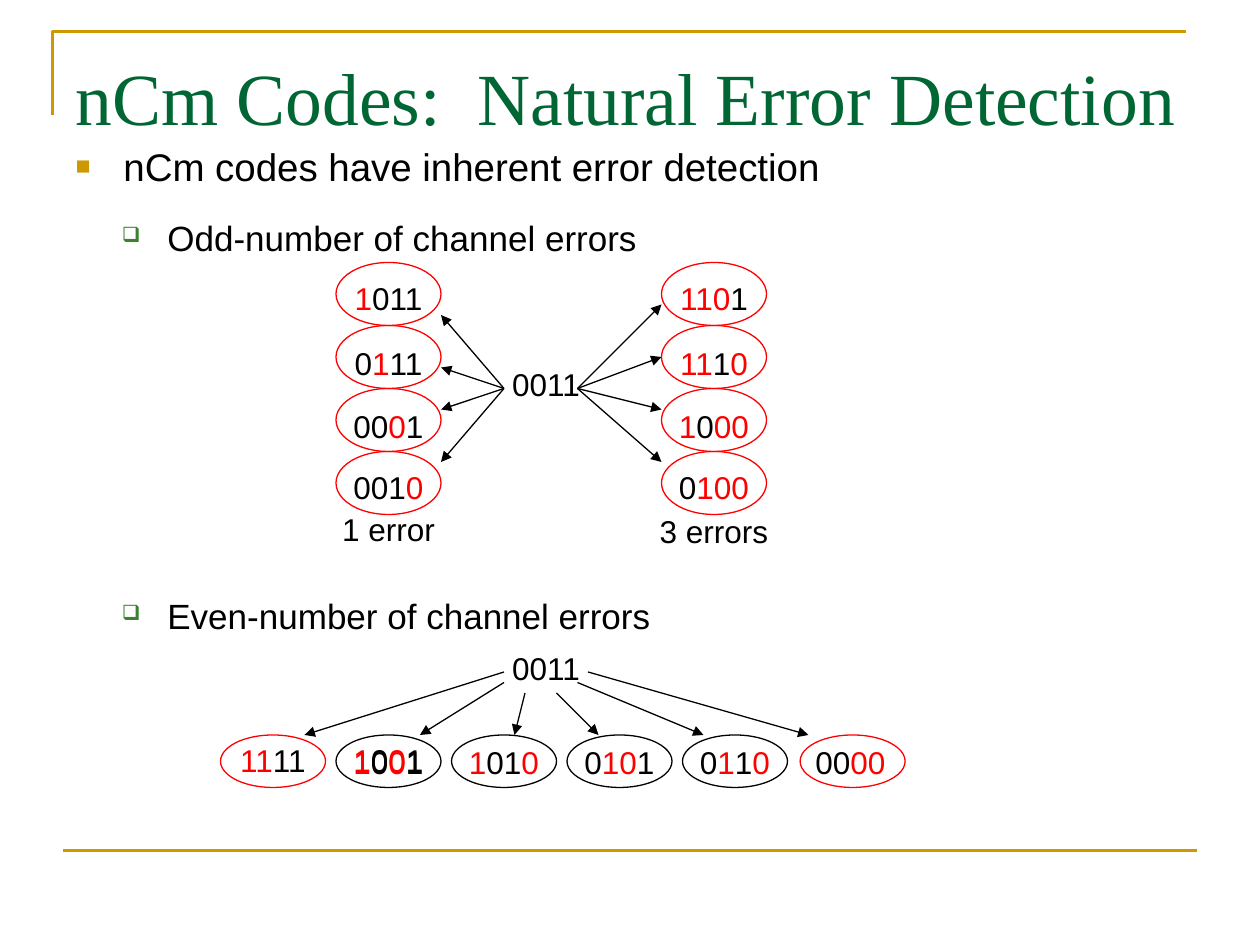
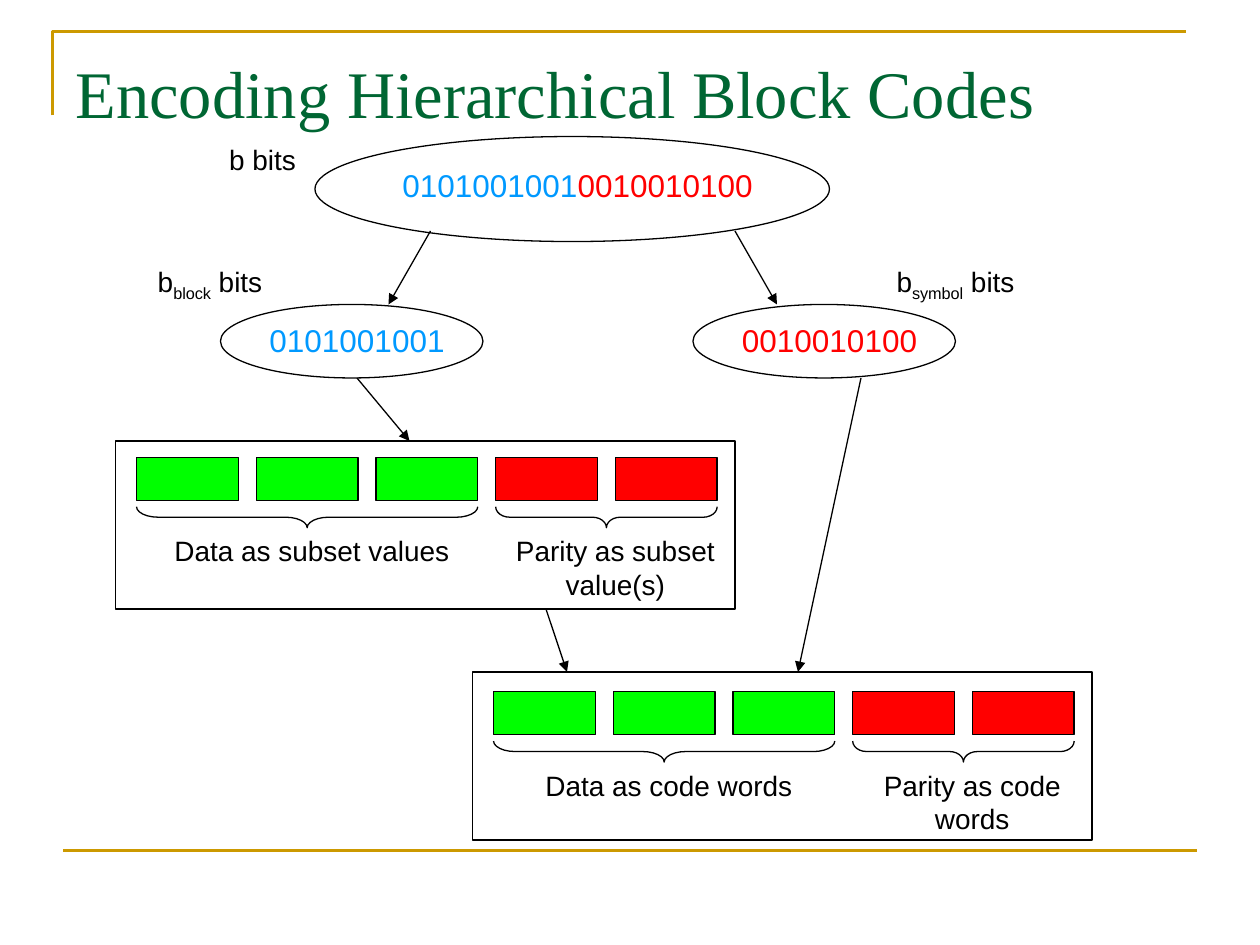
from itertools import groupby
from typing import Any, NamedTuple, Optional

from lxml.etree import SubElement
from pptx import Presentation
from pptx.dml.color import RGBColor
from pptx.enum.shapes import MSO_CONNECTOR, MSO_SHAPE
from pptx.enum.text import MSO_ANCHOR, MSO_AUTO_SIZE, PP_ALIGN
from pptx.oxml.ns import qn
from pptx.util import Inches, Pt

COLORS = {
    "gold": "CC9900",
    "title": "006633",
    "bullet": "3B812F",
    "black": "000000",
    "red": "FF0000",
    "blue": "0099FF",
    "green": "00FF00",
}
SLIDE_WIDTH, SLIDE_HEIGHT = Inches(10), Inches(7.5)
COLUMNS, ROWS = 120, 90
SENT_WORD = "0011"
CELL_WIDTH, CELL_PITCH = 9.7, 11.4
BRACE_THICKNESS = 2


class Box(NamedTuple):
    column: float
    row: float
    columns: float
    rows: float


class Piece(NamedTuple):
    text: str
    color: str = "black"
    baseline: int = 0


class Label(NamedTuple):
    pieces: list[Piece]
    box: Box
    size: int = 18


class Arrow(NamedTuple):
    start: tuple[float, float]
    end: tuple[float, float]


class Bullet(NamedTuple):
    character: str
    color: str
    percent: int
    margin: float
    indent: float
    size: int
    space_before: float


class Block(NamedTuple):
    frame: Box
    cells_row: float
    data_text: str
    parity_text: str


SQUARE = Bullet("■", "gold", 65, 0.38, -0.38, 22, 3)
HOLLOW = Bullet("❑", "bullet", 60, 0.73, -0.36, 20, 2)


def across(columns: float) -> int:
    return round(SLIDE_WIDTH * columns / COLUMNS)


def down(rows: float) -> int:
    return round(SLIDE_HEIGHT * rows / ROWS)


def place(box: Box) -> tuple[int, int, int, int]:
    return across(box.column), down(box.row), across(box.columns), down(box.rows)


def rgb(color: str) -> RGBColor:
    return RGBColor.from_string(COLORS[color])


def set_format(target: Any, values: dict[str, Any]) -> None:
    for name, value in values.items():
        setattr(target, name, value)


def set_line(shape: Any, color: str = "black", width: float = 0.75) -> None:
    shape.line.color.rgb = rgb(color)
    shape.line.width = Pt(width)


def write(paragraph: Any, pieces: list[Piece], size: int, font: str = "Arial") -> None:
    for piece in pieces:
        run = paragraph.add_run()
        run.text = piece.text
        set_format(run.font, {"name": font, "size": Pt(size), "bold": False})
        run.font.color.rgb = rgb(piece.color)
        if piece.baseline:
            run._r.get_or_add_rPr().set("baseline", str(piece.baseline * 1000))


def flipped_bits(word: str) -> list[Piece]:
    groups = groupby(zip(word, SENT_WORD), key=lambda pair: pair[0] != pair[1])
    return [
        Piece("".join(bit for bit, _ in pairs), "red" if flipped else "black")
        for flipped, pairs in groups
    ]


def add_label(slide: Any, label: Label) -> None:
    frame = slide.shapes.add_textbox(*place(label.box)).text_frame
    set_format(frame, {"word_wrap": True, "auto_size": MSO_AUTO_SIZE.SHAPE_TO_FIT_TEXT})
    paragraph = frame.paragraphs[0]
    set_format(paragraph, {"alignment": PP_ALIGN.CENTER, "space_before": Pt(1)})
    write(paragraph, label.pieces, label.size)


def add_figure(
    slide: Any, kind: MSO_SHAPE, box: Box, line: str = "black", fill: Optional[str] = None
) -> Any:
    shape = slide.shapes.add_shape(kind, *place(box))
    shape.shadow.inherit = False
    if fill:
        shape.fill.solid()
        shape.fill.fore_color.rgb = rgb(fill)
    else:
        shape.fill.background()
    set_line(shape, line)
    return shape


def add_line(slide: Any, start: tuple[float, float], end: tuple[float, float]) -> Any:
    connector = slide.shapes.add_connector(
        MSO_CONNECTOR.STRAIGHT,
        across(start[0]), down(start[1]), across(end[0]), down(end[1]),
    )
    set_line(connector)
    return connector


def add_arrow(slide: Any, arrow: Arrow) -> None:
    connector = add_line(slide, arrow.start, arrow.end)
    SubElement(connector.line._get_or_add_ln(), qn("a:tailEnd"), type="triangle")
    SubElement(connector.element.spPr, qn("a:effectLst"))


def add_brace(slide: Any, column: float, row: float, length: float, curve: float) -> None:
    upright = Box(
        column + (length - BRACE_THICKNESS) / 2,
        row - (length - BRACE_THICKNESS) / 2,
        BRACE_THICKNESS,
        length,
    )
    brace = add_figure(slide, MSO_SHAPE.RIGHT_BRACE, upright)
    brace.rotation = 90
    brace.adjustments[0] = curve


def fill_bullet(shape: Any, text: str, bullet: Bullet) -> None:
    frame = shape.text_frame
    set_format(frame, {
        "word_wrap": True,
        "auto_size": MSO_AUTO_SIZE.NONE,
        "vertical_anchor": MSO_ANCHOR.TOP,
    })
    paragraph = frame.paragraphs[0]
    paragraph.space_before = Pt(bullet.space_before)
    write(paragraph, [Piece(text)], bullet.size)
    properties = paragraph._p.get_or_add_pPr()
    properties.set("marL", str(Inches(bullet.margin)))
    properties.set("indent", str(Inches(bullet.indent)))
    color = SubElement(properties, qn("a:buClr"))
    SubElement(color, qn("a:srgbClr"), val=COLORS[bullet.color])
    SubElement(properties, qn("a:buSzPct"), val=str(bullet.percent * 1000))
    SubElement(properties, qn("a:buChar"), char=bullet.character)


def move_to(shape: Any, box: Box) -> None:
    set_format(shape, dict(zip(("left", "top", "width", "height"), place(box))))


def add_titled_slide(presentation: Any, layout: int, title: str, size: int) -> Any:
    slide = presentation.slides.add_slide(presentation.slide_layouts[layout])
    shape = slide.shapes.title
    move_to(shape, Box(6, 3.6, 108, 8.4))
    set_format(shape.text_frame, {
        "word_wrap": True,
        "auto_size": MSO_AUTO_SIZE.NONE,
        "vertical_anchor": MSO_ANCHOR.TOP,
        "margin_top": Inches(0.11),
    })
    paragraph = shape.text_frame.paragraphs[0]
    paragraph.alignment = PP_ALIGN.LEFT
    write(paragraph, [Piece(title, "title")], size, "Times New Roman")
    return slide


def add_master_rules(presentation: Any, slide: Any) -> None:
    builder = slide.shapes.build_freeform(across(5), down(11))
    corners = [(across(5), down(3)), (across(113), down(3))]
    builder.add_line_segments(corners, close=False)
    corner = builder.convert_to_shape()
    corner.fill.background()
    corner.shadow.inherit = False
    footer = add_line(slide, (6, 81), (114, 81))
    SubElement(footer.element.spPr, qn("a:effectLst"))
    for number, rule in enumerate((corner, footer), start=101):
        set_line(rule, "gold", 1.5)
        rule.element.xpath("./*/p:cNvPr")[0].set("id", str(number))
        presentation.slide_master.shapes.element.append(rule.element)


def draw_odd_errors(slide: Any) -> None:
    sides = [
        (32, ("1011", "0111", "0001", "0010"), (48, 37), 42, (30, 35, 39, 44)),
        (63, ("1101", "1110", "1000", "0100"), (55, 37), 63, (29, 34, 39, 44)),
    ]
    text_rows = (26, 32.2, 38.2, 44)
    add_label(slide, Label([Piece(SENT_WORD)], Box(46, 34.2, 12, 4.8)))
    for column, words, start, end_column, end_rows in sides:
        for index, (word, text_row, end_row) in enumerate(zip(words, text_rows, end_rows)):
            add_label(slide, Label(flipped_bits(word), Box(column - 1, text_row, 12, 4.8)))
            ellipse = Box(column, 25 + 6 * index, 10, 6)
            add_figure(slide, MSO_SHAPE.OVAL, ellipse, "red")
            add_arrow(slide, Arrow(start, (end_column, end_row)))
    add_label(slide, Label([Piece("1 error")], Box(28, 48, 18, 4.8)))
    add_label(slide, Label([Piece("3 errors")], Box(59, 48.2, 18, 4.8)))


def draw_even_errors(slide: Any) -> None:
    words = [
        ("1111", 20, 70), ("1001", 31, 70), ("1001", 31, 70.2), ("1010", 42, 70.2),
        ("0101", 53, 70.2), ("0110", 64, 70.2), ("0000", 75, 70.2),
    ]
    ellipses = [
        (21, "red"), (32, "black"), (43, "black"),
        (54, "black"), (65, "black"), (76.2, "red"),
    ]
    arrows = [
        Arrow((48, 64), (29, 70)), Arrow((48, 65), (40, 70)), Arrow((50, 66), (49, 70)),
        Arrow((53, 66), (57, 70)), Arrow((55, 65), (67, 70)), Arrow((56, 64), (77, 70)),
    ]
    add_label(slide, Label([Piece(SENT_WORD)], Box(46, 61.2, 12, 4.8)))
    for word, column, row in words:
        add_label(slide, Label(flipped_bits(word), Box(column, row, 12, 4.8)))
    for column, color in ellipses:
        add_figure(slide, MSO_SHAPE.OVAL, Box(column, 70, 10, 5), color)
    for arrow in arrows:
        add_arrow(slide, arrow)


def draw_block(slide: Any, block: Block) -> None:
    left, top = block.frame.column + 2, block.cells_row
    parity_left = left + 3 * CELL_PITCH
    for index, color in enumerate(["green"] * 3 + ["red"] * 2):
        cell = Box(left + index * CELL_PITCH, top, CELL_WIDTH, 4.1)
        add_figure(slide, MSO_SHAPE.RECTANGLE, cell, fill=color)
    add_brace(slide, left, top + 4.7, 2 * CELL_PITCH + CELL_WIDTH, 1.03)
    add_brace(slide, parity_left, top + 4.7, CELL_PITCH + CELL_WIDTH, 0.67)
    labels = [
        (block.data_text, Box(left + 0.9, top + 6.7, 31.6, 4.4)),
        (block.parity_text, Box(parity_left, top + 6.7, 22.8, 7.7)),
    ]
    for text, box in labels:
        add_label(slide, Label([Piece(text)], box, 16))
    add_figure(slide, MSO_SHAPE.RECTANGLE, block.frame)


def draw_hierarchy(slide: Any) -> None:
    block_bits, symbol_bits = Piece("0101001001", "blue"), Piece("0010010100", "red")
    for ellipse in (Box(30, 13, 49, 10), Box(21, 29, 25, 7), Box(66, 29, 25, 7)):
        add_figure(slide, MSO_SHAPE.OVAL, ellipse)
    labels = [
        Label([block_bits, symbol_bits], Box(35, 15.2, 40, 4.8)),
        Label([block_bits], Box(14, 30, 40, 4.8)),
        Label([symbol_bits], Box(59, 30, 40, 4.8)),
        Label([Piece("b bits")], Box(18, 13, 14, 4.4), 16),
    ]
    for subscript, column in (("block", 12), ("symbol", 83)):
        pieces = [Piece("b"), Piece(subscript, baseline=-25), Piece(" bits")]
        labels.append(Label(pieces, Box(column, 24.6, 16, 4.4), 16))
    for label in labels:
        add_label(slide, label)
    for block in (
        Block(Box(11, 42, 59, 16), 43.56, "Data as subset values", "Parity as subset value(s)"),
        Block(Box(45, 64, 59, 16), 65.88, "Data as code words", "Parity as code words"),
    ):
        draw_block(slide, block)
    for arrow in (
        Arrow((41, 22), (37, 29)), Arrow((70, 22), (74, 29)), Arrow((34, 36), (39, 42)),
        Arrow((52, 58), (54, 64)), Arrow((82, 36), (76, 64)),
    ):
        add_arrow(slide, arrow)


def main() -> None:
    presentation = Presentation()
    set_format(presentation, {"slide_width": SLIDE_WIDTH, "slide_height": SLIDE_HEIGHT})
    detection = add_titled_slide(presentation, 1, "nCm Codes:  Natural Error Detection", 42)
    add_master_rules(presentation, detection)
    body = detection.placeholders[1]
    move_to(body, Box(6, 13, 108, 6))
    fill_bullet(body, "nCm codes have inherent error detection", SQUARE)
    for text, row in (("Odd-number of channel errors", 20), ("Even-number of channel errors", 56)):
        box = detection.shapes.add_textbox(*place(Box(6, row, 108, 5)))
        fill_bullet(box, text, HOLLOW)
    draw_odd_errors(detection)
    draw_even_errors(detection)
    draw_hierarchy(add_titled_slide(presentation, 5, "Encoding Hierarchical Block Codes", 38))
    presentation.save("out.pptx")


if __name__ == "__main__":
    main()
